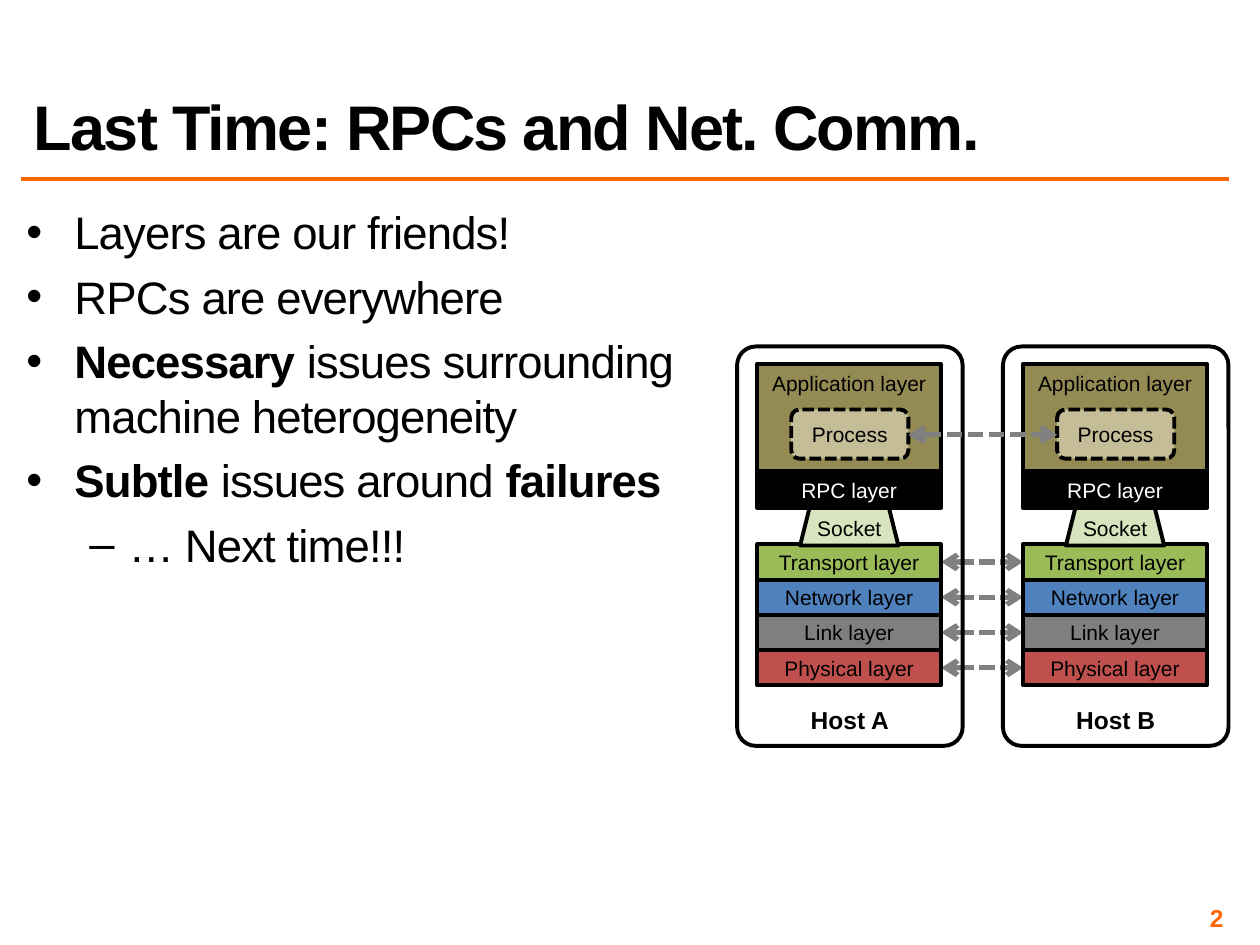
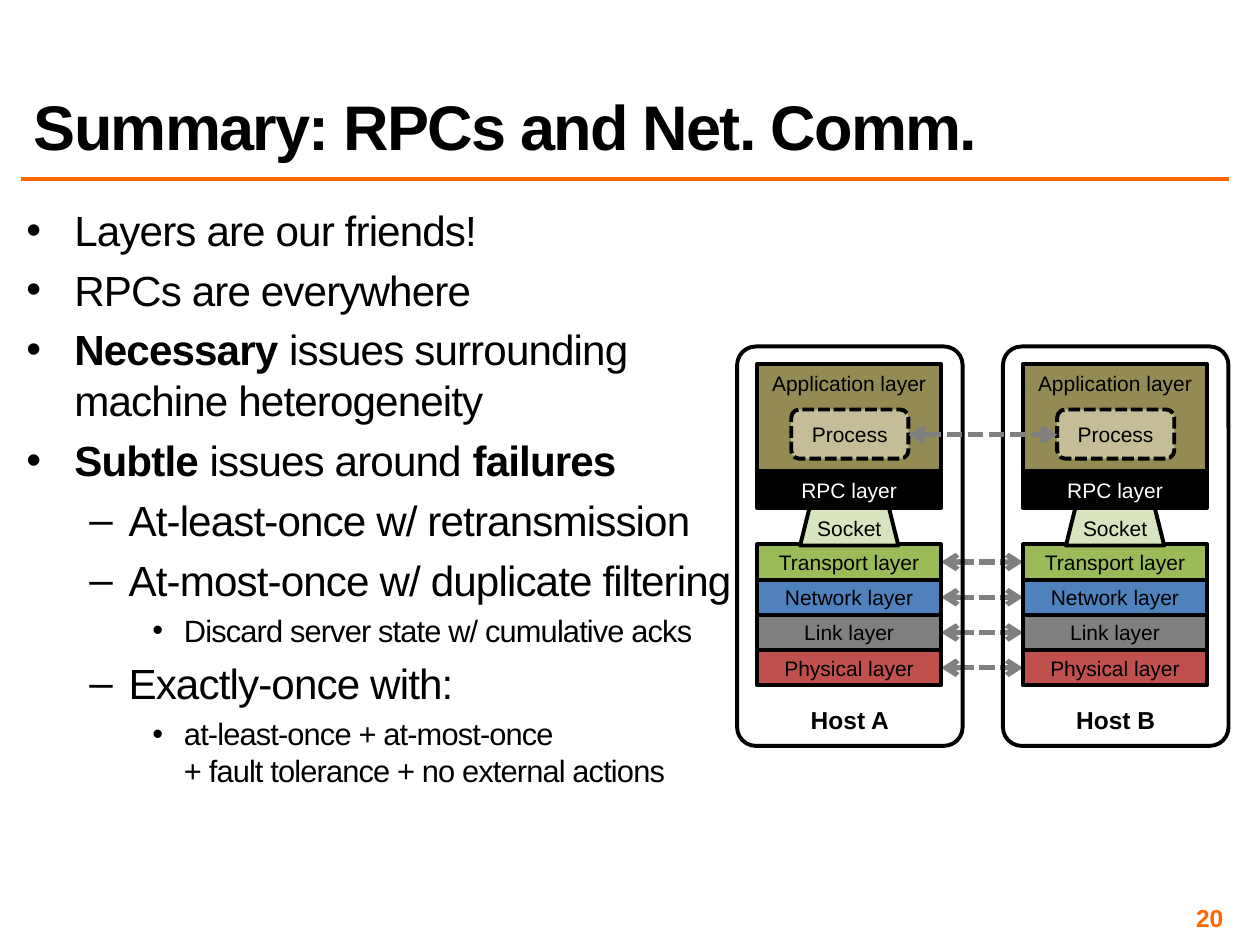
from lxml import etree
from pptx import Presentation
from pptx.dml.color import RGBColor
from pptx.enum.dml import MSO_LINE
from pptx.enum.shapes import MSO_CONNECTOR, MSO_SHAPE
from pptx.enum.text import MSO_ANCHOR, PP_ALIGN
from pptx.oxml.ns import qn
from pptx.util import Inches, Pt

LEFT, CENTER, RIGHT = PP_ALIGN.LEFT, PP_ALIGN.CENTER, PP_ALIGN.RIGHT
TOP, MIDDLE, BOTTOM = MSO_ANCHOR.TOP, MSO_ANCHOR.MIDDLE, MSO_ANCHOR.BOTTOM
RECT, ROUNDED = MSO_SHAPE.RECTANGLE, MSO_SHAPE.ROUNDED_RECTANGLE
TRAPEZOID = MSO_SHAPE.TRAPEZOID
PROCESS = MSO_SHAPE.FLOWCHART_ALTERNATE_PROCESS
STRAIGHT, DASHED = MSO_CONNECTOR.STRAIGHT, MSO_LINE.SQUARE_DOT

FONT = "Arial"
BLACK, WHITE, ORANGE, GRAY = "000000", "FFFFFF", "FF6600", "808080"
TIGHT = (0.04, 0.04, 0.04, 0.04)
NORMAL = (0.1, 0.05, 0.1, 0.05)
BULLETS = [("•", 0.38, 0.38), ("–", 0.81, 0.31), ("•", 1.25, 0.25)]

HOST_LEFT, HOST_TOP, HOST_WIDTH, HOST_HEIGHT = 5.85, 2.75, 1.79, 3.17
HOST_STEP = 2.11
LAYER_INSET, LAYER_WIDTH, LAYER_HEIGHT = 0.16, 1.46, 0.28
STACK_TOP, PROCESS_MIDDLE = 4.32, 3.45
PROCESS_INSET, PROCESS_WIDTH = 0.43, 0.93
LOWER_LAYERS = [
    ("Transport layer", "9BBB59"),
    ("Network layer", "4F81BD"),
    ("Link layer", "7F7F7F"),
    ("Physical layer", "C0504D"),
]

COMMON_POINTS = [
    (0, "Layers are our friends!"),
    (0, "RPCs are everywhere"),
    (0, "**Necessary** issues surrounding machine heterogeneity"),
    (0, "**Subtle** issues around **failures**"),
]
SUMMARY_POINTS = [
    (1, "At-least-once w/ retransmission"),
    (1, "At-most-once w/ duplicate filtering"),
    (2, "Discard server state w/ cumulative acks"),
    (1, "Exactly-once with:"),
    (2, "at-least-once + at-most-once\n+ fault tolerance + no external actions"),
]


def rgb(color):
    return RGBColor.from_string(color)


def box(left, top, width, height):
    return [Inches(value) for value in (left, top, width, height)]


def write(paragraph, text, size=12, color=BLACK, bold=False, align=LEFT, spacing=0):
    paragraph.alignment = align
    for line_index, line in enumerate(text.split("\n")):
        if line_index:
            paragraph.add_line_break()
        for part_index, part in enumerate(line.split("**")):
            if not part:
                continue
            run = paragraph.add_run()
            run.text = part
            run.font.name = FONT
            run.font.size = Pt(size)
            run.font.bold = bold or part_index % 2 == 1
            run.font.color.rgb = rgb(color)
            if spacing:
                run._r.get_or_add_rPr().set("spc", str(int(spacing * 100)))


def set_frame(frame, anchor=TOP, insets=NORMAL, wrap=True):
    frame.word_wrap = wrap
    frame.vertical_anchor = anchor
    (frame.margin_left, frame.margin_top,
     frame.margin_right, frame.margin_bottom) = box(*insets)


def add_text_area(slide, place, **frame_format):
    frame = slide.shapes.add_textbox(*box(*place)).text_frame
    set_frame(frame, **frame_format)
    return frame


def add_bullet(paragraph, level, text, size):
    mark, indent, hanging = BULLETS[level]
    paragraph.level = level
    paragraph.space_before = Pt(round(size * 0.22, 1))
    properties = paragraph._p.get_or_add_pPr()
    properties.set("marL", str(Inches(indent)))
    properties.set("indent", str(-Inches(hanging)))
    etree.SubElement(properties, qn("a:buFont")).set("typeface", FONT)
    etree.SubElement(properties, qn("a:buChar")).set("char", mark)
    write(paragraph, text, size=size, spacing=-0.5)


def add_points(slide, points, size, detail_size):
    frame = add_text_area(slide, (0.17, 1.58, 5.69, 5.5), insets=TIGHT)
    for index, (level, text) in enumerate(points):
        paragraph = frame.add_paragraph() if index else frame.paragraphs[0]
        add_bullet(paragraph, level, text, detail_size if level == 2 else size)


def add_line(slide, start, end, color, width):
    line = slide.shapes.add_connector(
        STRAIGHT, *[Inches(value) for value in (*start, *end)])
    line.line.color.rgb = rgb(color)
    line.line.width = Pt(width)
    etree.SubElement(line._element.spPr, qn("a:effectLst"))
    return line


def add_exchange(slide, left, right, y):
    arrow = add_line(slide, (left, y), (right, y), GRAY, 3)
    arrow.line.dash_style = DASHED
    outline = arrow._element.spPr.find(qn("a:ln"))
    for end in ("a:headEnd", "a:tailEnd"):
        etree.SubElement(outline, qn(end)).set("type", "arrow")


def add_block(slide, kind, place, label, fill=None, dashed=False, size=12,
              color=BLACK, bold=False, **frame_format):
    block = slide.shapes.add_shape(kind, *box(*place))
    block.shadow.inherit = False
    if fill:
        block.fill.solid()
        block.fill.fore_color.rgb = rgb(fill)
    else:
        block.fill.background()
    block.line.color.rgb = rgb(BLACK)
    block.line.width = Pt(2.25)
    if dashed:
        block.line.dash_style = DASHED
    set_frame(block.text_frame, **frame_format)
    write(block.text_frame.paragraphs[0], label, size=size, color=color,
          bold=bold, align=CENTER)
    return block


def add_layer(slide, left, top, label, fill, height=LAYER_HEIGHT, color=BLACK,
              anchor=MIDDLE):
    add_block(slide, RECT, (left, top, LAYER_WIDTH, height), label, fill,
              color=color, anchor=anchor, wrap=False)


def add_host(slide, left, name):
    layer_left = left + LAYER_INSET
    add_layer(slide, layer_left, 2.89, "Application layer", "948A54",
              height=0.85, anchor=TOP)
    for index, (label, fill) in enumerate(LOWER_LAYERS):
        add_layer(slide, layer_left, STACK_TOP + index * LAYER_HEIGHT, label, fill)
    outline = add_block(slide, ROUNDED, (left, HOST_TOP, HOST_WIDTH, HOST_HEIGHT),
                        name, size=14, bold=True, anchor=BOTTOM)
    outline.adjustments[0] = 0.083
    add_block(slide, TRAPEZOID, (left + 0.5, 4.03, 0.78, 0.3), "Socket", "D7E4BD",
              anchor=MIDDLE, insets=(0, 0.05, 0, 0.05))
    add_block(slide, PROCESS, (left + PROCESS_INSET, 3.25, PROCESS_WIDTH, 0.39),
              "Process", "C4BD97", dashed=True, anchor=MIDDLE)
    add_layer(slide, layer_left, 3.75, "RPC layer", BLACK, color=WHITE)


def add_network_diagram(slide):
    second_left = HOST_LEFT + HOST_STEP
    for index in range(len(LOWER_LAYERS)):
        add_exchange(slide, HOST_LEFT + LAYER_INSET + LAYER_WIDTH,
                     second_left + LAYER_INSET,
                     STACK_TOP + (index + 0.5) * LAYER_HEIGHT)
    add_host(slide, HOST_LEFT, "Host A")
    add_host(slide, second_left, "Host B")
    add_exchange(slide, HOST_LEFT + PROCESS_INSET + PROCESS_WIDTH,
                 second_left + PROCESS_INSET, PROCESS_MIDDLE)


def add_lecture_slide(deck, title, number, points, size, detail_size=17.6):
    slide = deck.slides.add_slide(deck.slide_layouts[6])
    add_line(slide, (0.17, 1.42), (9.75, 1.42), ORANGE, 2)
    add_points(slide, points, size, detail_size)
    footer = add_text_area(slide, (7.42, 7.17, 2.33, 0.23), anchor=MIDDLE,
                           insets=TIGHT)
    write(footer.paragraphs[0], number, size=14, color=ORANGE, bold=True,
          align=RIGHT)
    heading = add_text_area(slide, (0.17, 0.17, 9.58, 1.17), anchor=BOTTOM)
    heading.paragraphs[0].line_spacing = 0.8
    write(heading.paragraphs[0], title, size=36, bold=True, spacing=-1)
    add_network_diagram(slide)


def main():
    deck = Presentation()
    deck.slide_width, deck.slide_height = Inches(10), Inches(7.5)
    add_lecture_slide(deck, "Last Time: RPCs and Net. Comm.", "2",
                      COMMON_POINTS + [(1, "… Next time!!!")], 26)
    add_lecture_slide(deck, "Summary: RPCs and Net. Comm.", "20",
                      COMMON_POINTS + SUMMARY_POINTS, 24.1)
    deck.save("out.pptx")


if __name__ == "__main__":
    main()
